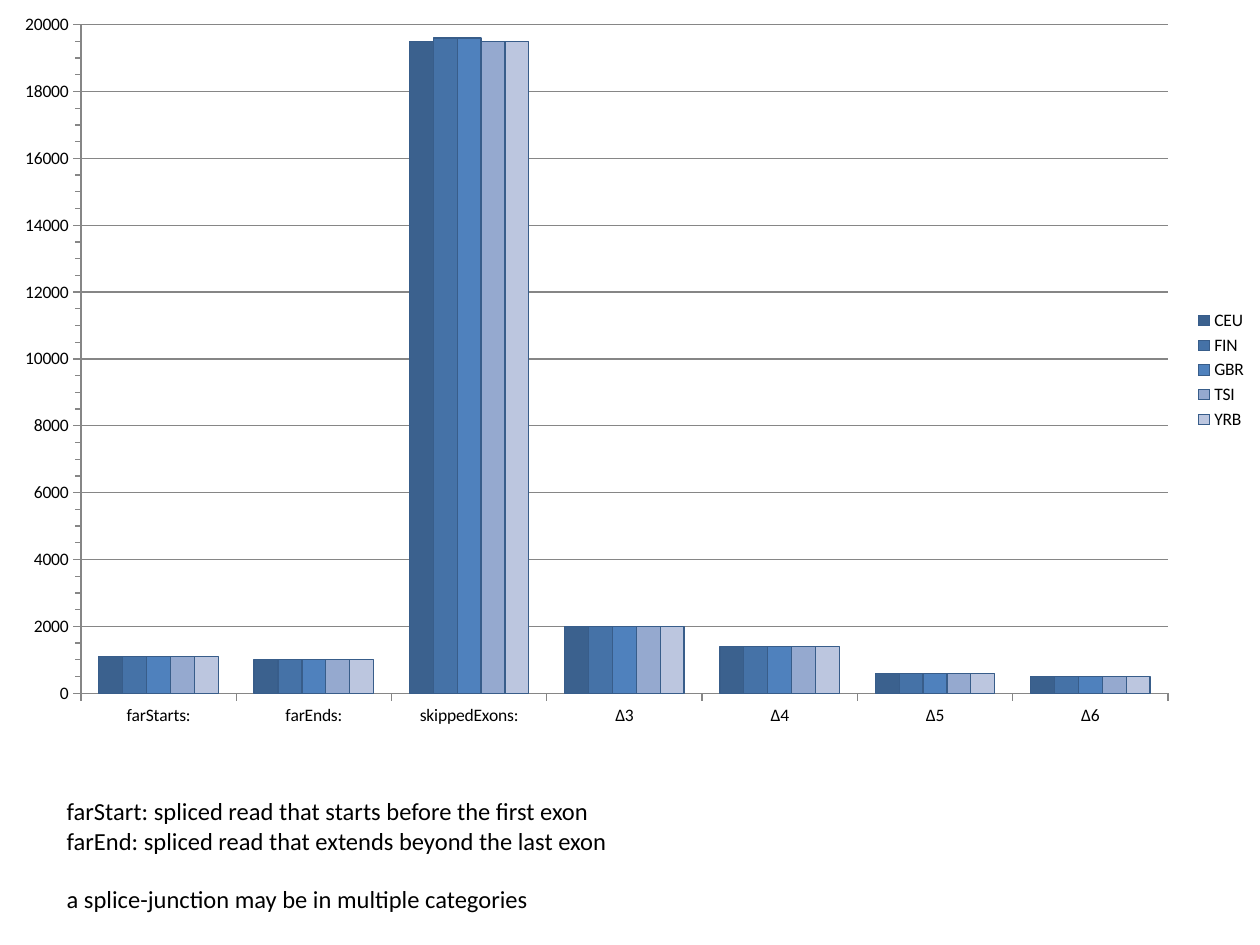
from pptx import Presentation
from pptx.chart.data import CategoryChartData as ChartData
from pptx.dml.color import RGBColor
from pptx.enum.chart import XL_CHART_TYPE as Kind, XL_LEGEND_POSITION as Place, XL_TICK_MARK as Tick
from pptx.enum.text import MSO_AUTO_SIZE as Fit
from pptx.util import Pt

FONT = "Calibri"
INK = "000000"
GREY = "868686"
EDGE = "385D8A"
CATS = ["farStarts:", "farEnds:", "skippedExons:", "Δ3", "Δ4", "Δ5", "Δ6"]
GROUPS = [
    ("CEU", "3B618E", [1100, 1000, 19500, 2000, 1400, 600, 500]),
    ("FIN", "4572A7", [1100, 1000, 19600, 2000, 1400, 600, 500]),
    ("GBR", "4F81BD", [1100, 1000, 19600, 2000, 1400, 600, 500]),
    ("TSI", "95A9CF", [1100, 1000, 19500, 2000, 1400, 600, 500]),
    ("YRB", "BCC6DF", [1100, 1000, 19500, 2000, 1400, 600, 500]),
]
NOTES = [
    ("farStart: spliced read that starts before the first exon", 0),
    ("farEnd: spliced read that extends beyond the last exon", 0),
    ("a splice-junction may be in multiple categories", 16.5),
]


def color(code):
    return RGBColor.from_string(code)


def style(font, size, code=INK):
    font.name = FONT
    font.size = Pt(size)
    font.color.rgb = color(code)


def stroke(line, code, width=0.75):
    line.color.rgb = color(code)
    line.width = Pt(width)


def write(para, text, size=14, code=INK, before=0):
    para.space_before = Pt(before)
    run = para.add_run()
    run.text = text
    style(run.font, size, code)


def draw_chart(slide, box):
    data = ChartData(number_format="General")
    data.categories = CATS
    for name, _, vals in GROUPS:
        data.add_series(name, vals)
    chart = slide.shapes.add_chart(Kind.COLUMN_CLUSTERED, *map(Pt, box), data).chart
    chart.has_title = False
    style(chart.font, 10)
    chart.has_legend = True
    chart.legend.position = Place.RIGHT
    chart.legend.include_in_layout = False

    plot = chart.plots[0]
    plot.gap_width = 150
    plot.overlap = 0
    plot.vary_by_categories = False
    for bars, (_, code, _) in zip(plot.series, GROUPS):
        bars.format.fill.solid()
        bars.format.fill.fore_color.rgb = color(code)
        stroke(bars.format.line, EDGE)

    for axis in (chart.category_axis, chart.value_axis):
        axis.major_tick_mark = Tick.OUTSIDE
        stroke(axis.format.line, GREY)
    scale = chart.value_axis
    scale.minor_tick_mark = Tick.OUTSIDE
    scale.minimum_scale, scale.maximum_scale = 0, 20000
    scale.major_unit, scale.minor_unit = 2000, 500
    scale.has_major_gridlines = True
    stroke(scale.major_gridlines.format.line, GREY)


def draw_notes(slide, box):
    frame = slide.shapes.add_textbox(*map(Pt, box)).text_frame
    frame.word_wrap = False
    frame.auto_size = Fit.SHAPE_TO_FIT_TEXT
    for i, (text, before) in enumerate(NOTES):
        para = frame.add_paragraph() if i else frame.paragraphs[0]
        write(para, text, before=before)


def main():
    deck = Presentation()
    deck.slide_width, deck.slide_height = Pt(720), Pt(540)
    slide = deck.slides.add_slide(deck.slide_layouts[6])
    draw_notes(slide, (31, 451.5, 326, 75))
    draw_chart(slide, (0, 0, 720, 423))
    deck.save("out.pptx")


if __name__ == "__main__":
    main()
